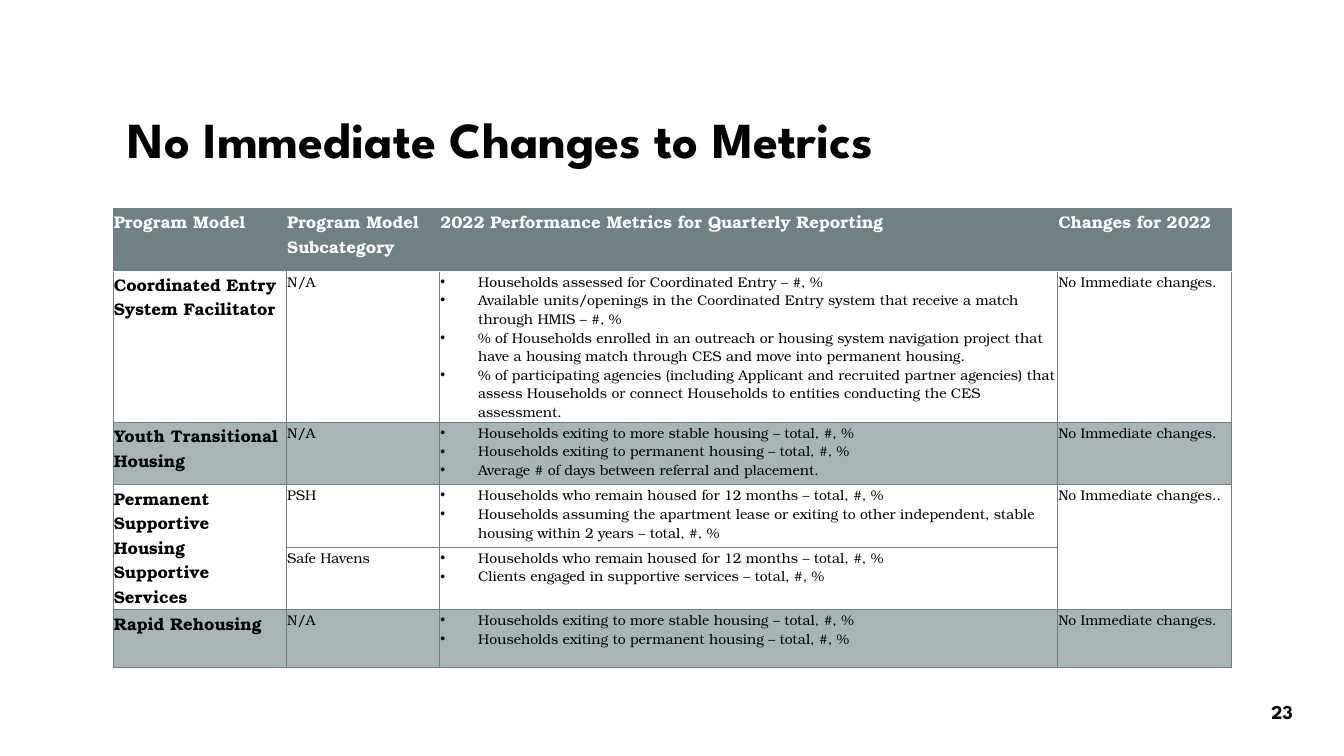
from lxml.etree import SubElement
from pptx import Presentation
from pptx.dml.color import RGBColor
from pptx.enum.text import MSO_ANCHOR as Anchor, PP_ALIGN as Align
from pptx.oxml import parse_xml
from pptx.oxml.ns import nsdecls, qn
from pptx.util import Pt

COLORS = {"ink": "000000", "paper": "FFFFFF", "slate": "6F8183", "mist": "A8B4B5"}
HEADING_FONT = "League Spartan"
BODY_FONT = "TeX Gyre Bonum"

COLUMN_WIDTHS = [123.8, 109.4, 441.4, 124.6]
ROW_HEIGHTS = [44.64, 108, 44.64, 44.64, 44.64, 41.4]
HEADER = ["Program Model", "Program Model Subcategory",
          "2022 Performance Metrics for Quarterly Reporting", "Changes for 2022"]
NO_CHANGE = "No Immediate changes."
STABLE_EXITS = "Households exiting to more stable housing – total, #, %"
PERMANENT_EXITS = "Households exiting to permanent housing – total, #, %"
REMAIN_HOUSED = "Households who remain housed for 12 months – total, #, %"

# Each program: model, fill, [(subcategory, metrics)], changes
PROGRAMS = [
    ("Coordinated Entry System Facilitator", "paper", [("N/A", [
        "Households assessed for Coordinated Entry – #, %",
        "Available units/openings in the Coordinated Entry system that receive a match "
        "through HMIS – #, %",
        "% of Households enrolled in an outreach or housing system navigation project that "
        "have a housing match through CES and move into permanent housing.",
        "% of participating agencies (including Applicant and recruited partner agencies) that "
        "assess Households or connect Households to entities conducting the CES assessment.",
    ])], NO_CHANGE),
    ("Youth Transitional Housing", "mist", [("N/A", [
        STABLE_EXITS, PERMANENT_EXITS,
        "Average # of days between referral and placement.",
    ])], NO_CHANGE),
    ("Permanent Supportive Housing Supportive Services", "paper", [
        ("PSH", [
            REMAIN_HOUSED,
            "Households assuming the apartment lease or exiting to other independent, stable "
            "housing within 2 years – total, #, %",
        ]),
        ("Safe Havens", [
            REMAIN_HOUSED,
            "Clients engaged in supportive services – total, #, %",
        ]),
    ], NO_CHANGE + "."),
    ("Rapid Rehousing", "mist", [("N/A", [STABLE_EXITS, PERMANENT_EXITS])], NO_CHANGE),
]


def add_bullet(paragraph, indent=27):
    properties = paragraph._p.get_or_add_pPr()
    properties.set("marL", str(Pt(indent)))
    properties.set("indent", str(-Pt(indent)))
    SubElement(properties, qn("a:buFont")).set("typeface", "Arial")
    SubElement(properties, qn("a:buChar")).set("char", "•")


def write(frame, *lines, size=10, font=BODY_FONT, color="ink", bold=False,
          align=Align.LEFT, spacing=None, bullets=False):
    """Fill a text frame with one paragraph per line."""
    frame.word_wrap = True
    for index, line in enumerate(lines):
        paragraph = frame.add_paragraph() if index else frame.paragraphs[0]
        if bullets:
            add_bullet(paragraph)
        paragraph.alignment = align
        if spacing:
            paragraph.line_spacing = spacing
        run = paragraph.add_run()
        run.text = line
        run.font.size = Pt(size)
        run.font.name = font
        run.font.bold = bold
        run.font.color.rgb = RGBColor.from_string(COLORS[color])


def add_label(slide, text, left, top, width, height, **text_format):
    frame = slide.shapes.add_textbox(Pt(left), Pt(top), Pt(width), Pt(height)).text_frame
    frame.vertical_anchor = Anchor.MIDDLE
    write(frame, text, font=HEADING_FONT, bold=True, **text_format)


def set_borders(cell, **overrides):
    """Draw thin slate edges; overrides map L, R, T or B to (color, width)."""
    properties = cell._tc.get_or_add_tcPr()
    for index, side in enumerate("LRTB"):
        color, width = overrides.get(side, ("slate", 0.5))
        properties.insert(index, parse_xml(
            f'<a:ln{side} {nsdecls("a")} w="{Pt(width)}"><a:solidFill>'
            f'<a:srgbClr val="{COLORS[color]}"/></a:solidFill></a:ln{side}>'))


def style_cell(cell, fill, **borders):
    cell.margin_left = cell.margin_right = Pt(0.72)
    cell.margin_top = cell.margin_bottom = Pt(0.72)
    cell.fill.solid()
    cell.fill.fore_color.rgb = RGBColor.from_string(COLORS[fill])
    set_borders(cell, **borders)


def style_program_row(table, row, fill):
    for column in range(len(COLUMN_WIDTHS)):
        borders = {"T": ("paper", 1)} if row == 1 else {}
        if column < 2:
            borders["LR"[1 - column]] = ("slate", 1)
        style_cell(table.cell(row, column), fill, **borders)


def add_metrics_table(slide, left, top):
    table = slide.shapes.add_table(
        len(ROW_HEIGHTS), len(COLUMN_WIDTHS), Pt(left), Pt(top),
        Pt(sum(COLUMN_WIDTHS)), Pt(sum(ROW_HEIGHTS))).table
    table.horz_banding = False
    for column, width in zip(table.columns, COLUMN_WIDTHS):
        column.width = Pt(width)
    for row, height in zip(table.rows, ROW_HEIGHTS):
        row.height = Pt(height)

    for column, heading in enumerate(HEADER):
        cell = table.cell(0, column)
        style_cell(cell, "slate", B=("paper", 1))
        write(cell.text_frame, heading, size=12, color="paper", bold=True)

    row = 1
    for model, fill, subcategories, changes in PROGRAMS:
        first = row
        for subcategory, metrics in subcategories:
            style_program_row(table, row, fill)
            write(table.cell(row, 1).text_frame, subcategory)
            write(table.cell(row, 2).text_frame, *metrics, bullets=True)
            row += 1
        if len(subcategories) > 1:
            for column in (0, 3):
                table.cell(first, column).merge(table.cell(row - 1, column))
        write(table.cell(first, 0).text_frame, model, size=12, bold=True)
        write(table.cell(first, 3).text_frame, changes)


def main():
    deck = Presentation()
    deck.slide_width, deck.slide_height = Pt(960), Pt(540)
    slide = deck.slides.add_slide(deck.slide_layouts[6])
    add_label(slide, "No Immediate Changes to Metrics", 84.24, 38.16, 792, 126.72,
              size=36, spacing=0.9)
    add_metrics_table(slide, 80.64, 149.04)
    add_label(slide, "23", 890.64, 493.92, 50.4, 28.8, size=14, align=Align.CENTER)
    deck.save("out.pptx")


if __name__ == "__main__":
    main()
